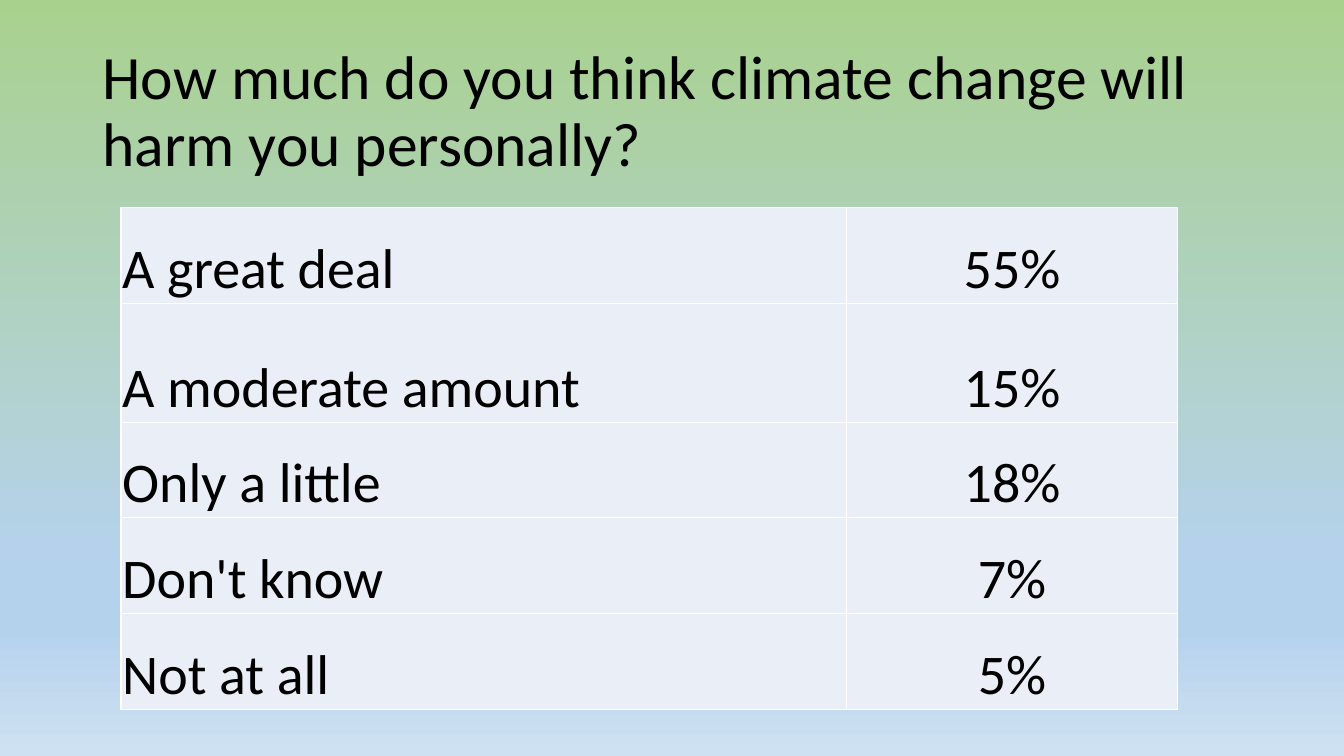
from copy import deepcopy

from lxml import etree
from pptx import Presentation
from pptx.dml.color import RGBColor
from pptx.enum import text
from pptx.oxml import ns
from pptx.util import Cm, Pt

QUESTION = "How much do you think climate change will harm you personally?"
ANSWERS = [
    ("A great deal", "55%"),
    ("A moderate amount", "15%"),
    ("Only a little", "18%"),
    ("Don't know", "7%"),
    ("Not at all", "5%"),
]
BACKGROUND_STOPS = [(0, "A9D18E"), (0.74, "B5D2EC"), (0.83, "B5D2EC"), (1, "CEE1F2")]
FONT, INK, CELL_FILL, BORDER = "Calibri", "000000", "EAEFF7", "FFFFFF"
COLUMN_WIDTHS = (18.29, 8.33)
ROW_HEIGHT, TALL_ROW_HEIGHT, TALL_ROW = 2.41, 3.0, 1
TABLE_LEFT, TABLE_TOP = 3.05, 5.23
ALIGNMENTS = (text.PP_ALIGN.LEFT, text.PP_ALIGN.CENTER)


def color(hex_string):
    return RGBColor.from_string(hex_string)


def format_runs(para, size):
    for span in para.runs:
        span.font.name = FONT
        span.font.size = Pt(size)
        span.font.color.rgb = color(INK)


def paint_background(slide):
    fill = slide.background.fill
    fill.gradient()
    fill.gradient_angle = 270
    stop_list = slide.element.find(".//" + ns.qn("a:gsLst"))
    while len(stop_list) < len(BACKGROUND_STOPS):
        stop_list.append(deepcopy(stop_list[0]))
    for stop, (position, hex_string) in zip(fill.gradient_stops, BACKGROUND_STOPS):
        stop.position = position
        stop.color.rgb = color(hex_string)


def add_borders(cell):
    properties = cell._tc.get_or_add_tcPr()
    for side in ("lnL", "lnR", "lnT", "lnB"):
        line = etree.SubElement(properties, ns.qn("a:" + side), w=str(Pt(1)))
        solid = etree.SubElement(line, ns.qn("a:solidFill"))
        etree.SubElement(solid, ns.qn("a:srgbClr"), val=BORDER)


def fill_cell(cell, wording, alignment):
    cell.text = wording
    cell.vertical_anchor = text.MSO_ANCHOR.BOTTOM
    cell.margin_left = cell.margin_right = cell.margin_top = Cm(0.03)
    cell.margin_bottom = 0
    para = cell.text_frame.paragraphs[0]
    para.alignment = alignment
    format_runs(para, 40)
    add_borders(cell)
    cell.fill.solid()
    cell.fill.fore_color.rgb = color(CELL_FILL)


def add_title(slide):
    title = slide.shapes.title
    title.left, title.top, title.width, title.height = Cm(2.33), Cm(1.01), Cm(29.21), Cm(3.68)
    frame = title.text_frame
    frame.text = QUESTION
    frame.word_wrap = True
    frame.vertical_anchor = text.MSO_ANCHOR.MIDDLE
    para = frame.paragraphs[0]
    para.alignment = text.PP_ALIGN.LEFT
    para.line_spacing = 0.9
    format_runs(para, 44)


def add_answers(slide):
    heights = [TALL_ROW_HEIGHT if i == TALL_ROW else ROW_HEIGHT for i in range(len(ANSWERS))]
    table = slide.shapes.add_table(
        len(ANSWERS), len(COLUMN_WIDTHS), Cm(TABLE_LEFT), Cm(TABLE_TOP),
        Cm(sum(COLUMN_WIDTHS)), Cm(sum(heights))).table
    table.first_row = table.horz_banding = False
    for column, width in zip(table.columns, COLUMN_WIDTHS):
        column.width = Cm(width)
    for row, height, answer in zip(table.rows, heights, ANSWERS):
        row.height = Cm(height)
        for cell, wording, alignment in zip(row.cells, answer, ALIGNMENTS):
            fill_cell(cell, wording, alignment)


def main():
    deck = Presentation()
    deck.slide_width, deck.slide_height = Cm(33.87), Cm(19.05)
    slide = deck.slides.add_slide(deck.slide_layouts[5])
    paint_background(slide)
    add_title(slide)
    add_answers(slide)
    deck.save("out.pptx")


if __name__ == "__main__":
    main()
